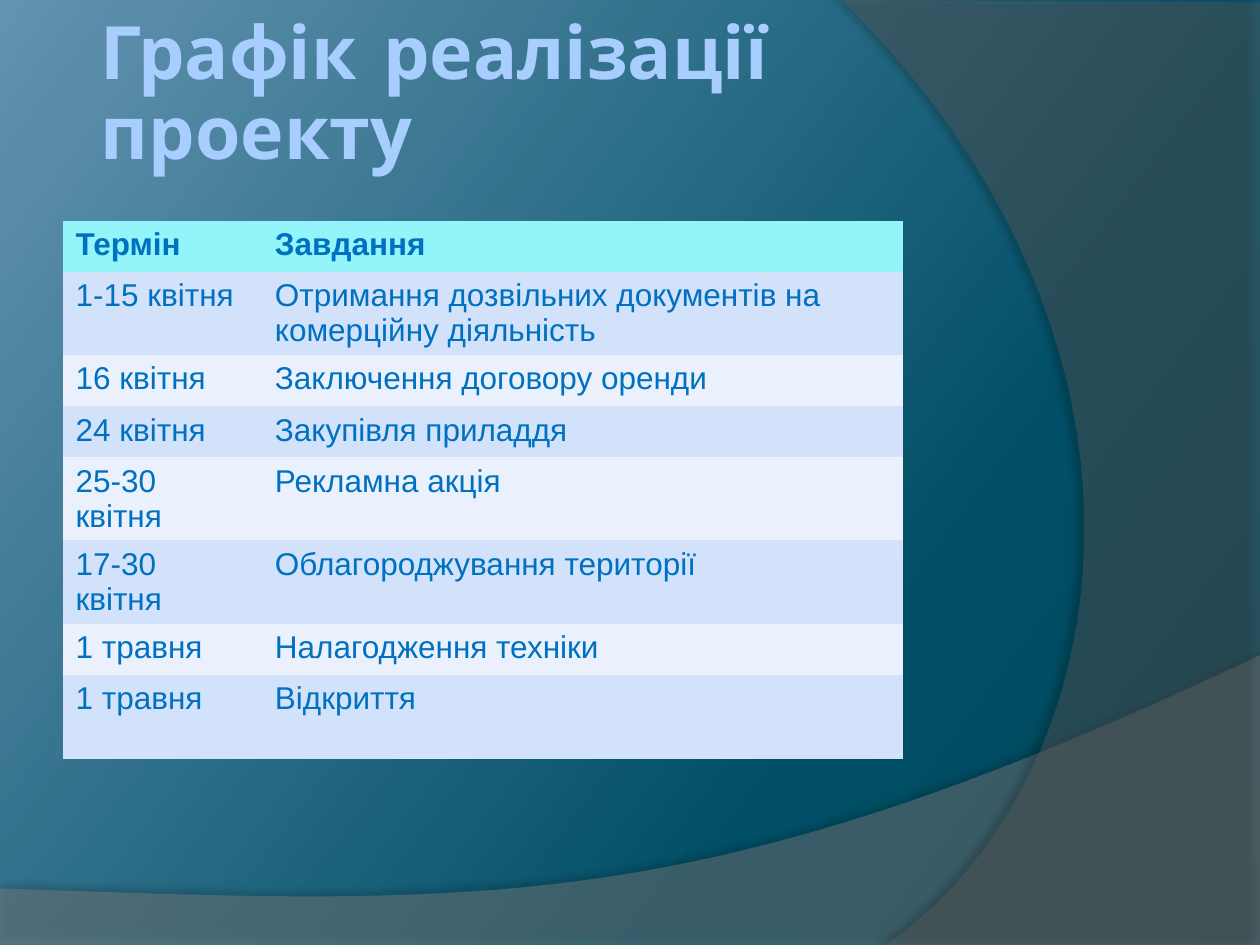
from copy import deepcopy
from dataclasses import dataclass

from lxml import etree
from pptx import Presentation
from pptx.dml.color import RGBColor
from pptx.enum.text import MSO_ANCHOR, MSO_AUTO_SIZE, PP_ALIGN
from pptx.oxml.ns import qn
from pptx.util import Cm, Pt

TOP = MSO_ANCHOR.TOP
LEFT = PP_ALIGN.LEFT
NO_FIT = MSO_AUTO_SIZE.NONE
TITLE_ONLY = 5
PLAIN_TABLE_STYLE = "{2D5ABB26-0587-4C30-8999-92F81FD0307C}"
CURVE_STEPS = 40


@dataclass(frozen=True)
class Theme:
    back: tuple = ((0, "004355"), (0.3, "004F66"), (1, "6393B0"))
    back_angle: int = 217
    wave: str = "7F7F7F"
    arc: str = "5E5E5E"
    title: str = "A8CDFF"
    text: str = "0070C0"
    header: str = "93F5F9"
    bands: tuple = ("D1E2FA", "EAF1FC")
    title_font: str = "Comic Neue"
    body_font: str = "Arial"
    title_size: int = 42
    body_size: int = 18


THEME = Theme()

SCHEDULE = [
    ("Термін", "Завдання"),
    ("1-15 квітня", "Отримання дозвільних документів на комерційну діяльність"),
    ("16 квітня", "Заключення договору оренди"),
    ("24 квітня", "Закупівля приладдя"),
    ("25-30 квітня", "Рекламна акція"),
    ("17-30 квітня", "Облагороджування території"),
    ("1 травня", "Налагодження техніки"),
    ("1 травня", "Відкриття"),
]


def rgb(value):
    return RGBColor.from_string(value)


def set_font(p, name, size, color, bold):
    p.font.name = name
    p.font.size = Pt(size)
    p.font.bold = bold
    p.font.color.rgb = rgb(color)


def set_background(slide):
    fill = slide.background.fill
    fill.gradient()
    fill.gradient_angle = 360 - THEME.back_angle  # counter-clockwise
    stops = slide.element.find(".//" + qn("a:gsLst"))
    stops.insert(1, deepcopy(stops[0]))
    for stop, (position, color) in zip(fill.gradient_stops, THEME.back):
        stop.position = position
        stop.color.rgb = rgb(color)


def bezier(p0, p1, p2, p3):
    """Points along a cubic curve, after its start."""
    points = []
    for i in range(1, CURVE_STEPS + 1):
        t = i / CURVE_STEPS
        weights = ((1 - t) ** 3, 3 * t * (1 - t) ** 2, 3 * t * t * (1 - t), t ** 3)
        points.append(tuple(sum(w * p[axis] for w, p in zip(weights, (p0, p1, p2, p3)))
                            for axis in (0, 1)))
    return points


def add_shadow(sp, alpha, distance, angle):
    effects = etree.SubElement(sp._element.spPr, qn("a:effectLst"))
    shadow = etree.SubElement(effects, qn("a:outerShdw"), blurRad=str(Pt(4)),
                              dist=str(Pt(distance)), dir=str(angle * 60000),
                              algn="ctr", rotWithShape="0")
    color = etree.SubElement(shadow, qn("a:srgbClr"), val="000000")
    etree.SubElement(color, qn("a:alpha"), val=str(alpha * 1000))


def add_swoosh(slide, corners, curve, color, alpha, shadow):
    """Translucent outline: straight corners, then a curve from the last one."""
    points = [(Cm(x), Cm(y)) for x, y in corners + bezier(corners[-1], *curve)]
    builder = slide.shapes.build_freeform(*points[0])
    builder.add_line_segments(points[1:], close=True)
    sp = builder.convert_to_shape()
    sp.fill.solid()
    sp.fill.fore_color.rgb = rgb(color)
    clr = sp._element.spPr.find(".//" + qn("a:srgbClr"))
    etree.SubElement(clr, qn("a:alpha"), val=str(alpha * 1000))
    sp.line.fill.background()
    add_shadow(sp, *shadow)


def format_title(slide, text):
    title = slide.shapes.title
    slide.shapes._spTree.append(title._element)  # in front of the swooshes
    title.left, title.top, title.width, title.height = Cm(1.9), Cm(0.2), Cm(18.42), Cm(5.08)
    tf = title.text_frame
    tf.text = text
    tf.word_wrap = True
    tf.auto_size = NO_FIT
    tf.vertical_anchor = TOP
    tf.margin_left = tf.margin_right = tf.margin_top = Cm(0.13)
    tf.margin_bottom = 0
    p = tf.paragraphs[0]
    p.alignment = LEFT
    p.line_spacing = 0.9
    set_font(p, THEME.title_font, THEME.title_size, THEME.title, True)


def add_schedule(slide, rows):
    row_height, last_height = Cm(1.03), Cm(1.69)
    widths = Cm(4.02), Cm(12.91)
    frame = slide.shapes.add_table(len(rows), len(widths), Cm(1.27), Cm(4.45),
                                   sum(widths), row_height * len(rows))
    table = frame.table
    table._tbl.tblPr.find(qn("a:tableStyleId")).text = PLAIN_TABLE_STYLE
    table.horz_banding = False
    for column, width in zip(table.columns, widths):
        column.width = width
    for i, texts in enumerate(rows):
        table.rows[i].height = row_height
        for j, text in enumerate(texts):
            cell = table.cell(i, j)
            cell.fill.solid()
            cell.fill.fore_color.rgb = rgb(THEME.bands[(i - 1) % 2] if i else THEME.header)
            cell.text = text
            set_font(cell.text_frame.paragraphs[0], THEME.body_font,
                     THEME.body_size, THEME.text, i == 0)
    table.rows[len(rows) - 1].height = last_height


def main():
    prs = Presentation()
    prs.slide_width, prs.slide_height = Cm(25.4), Cm(19.05)
    slide = prs.slides.add_slide(prs.slide_layouts[TITLE_ONLY])

    # Backdrop
    set_background(slide)
    add_swoosh(slide, [(0, 17.91), (0, 19.05), (25.4, 19.05), (25.4, 13.21)],
               [(14.2, 18.52), (9.93, 18.26), (0, 17.91)],
               THEME.wave, 45, (35, 3.5, 270))
    add_swoosh(slide, [(25.4, 0.05), (25.4, 19.05), (17.86, 19.05)],
               [(22.63, 15.72), (24.05, 6.99), (16.97, 0)],
               THEME.arc, 40, (45, 4, 180))

    # Content
    format_title(slide, "Графік реалізації проекту")
    add_schedule(slide, SCHEDULE)

    prs.save("out.pptx")


if __name__ == "__main__":
    main()
